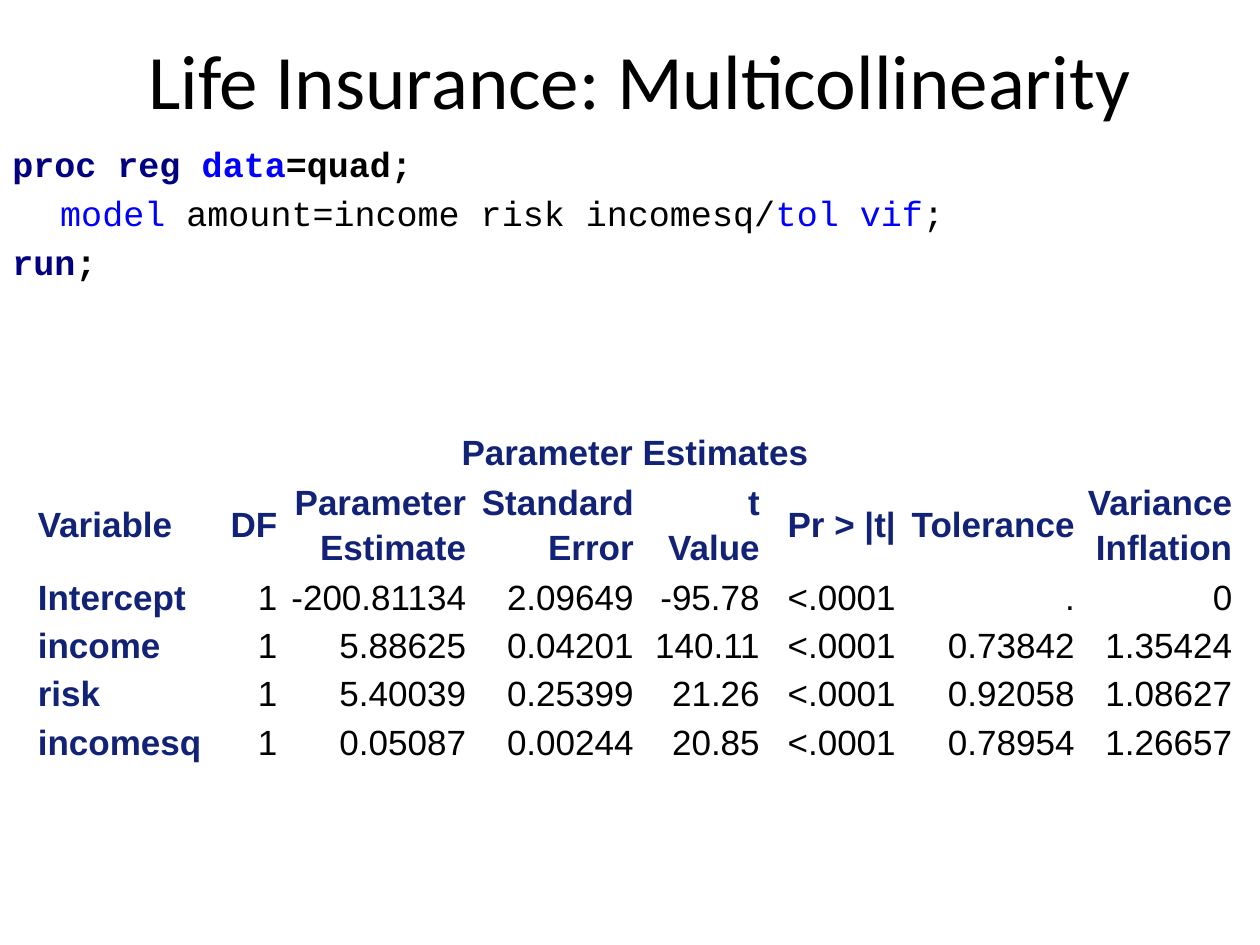
from pptx import Presentation
from pptx.dml.color import RGBColor
from pptx.enum.text import MSO_ANCHOR, PP_ALIGN
from pptx.util import Inches, Pt

BLACK, NAVY, BLUE, HEADING = "000000", "000080", "0000FF", "112277"

COLUMN_WIDTHS = [1.5, 0.5, 1.5, 1.33, 1, 1.08, 1.42, 1.25]
HEADERS = ["Variable", "DF", "Parameter\nEstimate", "Standard\nError",
           "t\nValue", "Pr > |t|", "Tolerance", "Variance\nInflation"]
ESTIMATES = [
    ["Intercept", "1", "-200.81134", "2.09649", "-95.78", "<.0001", ".", "0"],
    ["income", "1", "5.88625", "0.04201", "140.11", "<.0001", "0.73842", "1.35424"],
    ["risk", "1", "5.40039", "0.25399", "21.26", "<.0001", "0.92058", "1.08627"],
    ["incomesq", "1", "0.05087", "0.00244", "20.85", "<.0001", "0.78954", "1.26657"],
]

# Each code line: indent in inches, bold, coloured pieces
CODE = [
    (0, True, [("proc reg ", NAVY), ("data", BLUE), ("=quad;", BLACK)]),
    (0.38, False, [("model", BLUE), (" amount=income risk incomesq/", BLACK),
                   ("tol vif", BLUE), (";", BLACK)]),
    (0, True, [("run", NAVY), (";", BLACK)]),
]


def rgb(value):
    return RGBColor.from_string(value)


def add_text(para, text, font="Arial", size=20, color=BLACK, bold=False):
    for number, line in enumerate(text.split("\n")):
        if number:
            para.add_line_break()
        span = para.add_run()
        span.text = line
        span.font.name = font
        span.font.size = Pt(size)
        span.font.bold = bold
        span.font.color.rgb = rgb(color)


def place_title(page, left, top, width, height):
    title = page.shapes.title
    title.left, title.top = Inches(left), Inches(top)
    title.width, title.height = Inches(width), Inches(height)
    frame = title.text_frame
    frame.vertical_anchor = MSO_ANCHOR.MIDDLE
    para = frame.paragraphs[0]
    para.alignment = PP_ALIGN.CENTER
    add_text(para, "Life Insurance: Multicollinearity", font="Calibri", size=44)


def place_code(page, left, top, width, height):
    box = page.shapes.add_textbox(Inches(left), Inches(top), Inches(width), Inches(height))
    frame = box.text_frame
    frame.word_wrap = True
    for number, (indent, bold, pieces) in enumerate(CODE):
        para = frame.add_paragraph() if number else frame.paragraphs[0]
        para.space_before = Pt(4)
        para._p.get_or_add_pPr().set("marL", str(Inches(indent)))
        for text, color in pieces:
            add_text(para, text, font="Courier New", color=color, bold=bold)


def clear_cell(cell):
    cell.fill.background()
    cell.vertical_anchor = MSO_ANCHOR.MIDDLE
    cell.margin_left = cell.margin_right = Inches(0.05)
    cell.margin_top = cell.margin_bottom = 0


def fill_cell(cell, text, align, heading):
    para = cell.text_frame.paragraphs[0]
    para.alignment = align
    para.line_spacing = 1.15
    para.space_before = para.space_after = Pt(5)
    add_text(para, text, color=HEADING if heading else BLACK, bold=heading)


def place_estimates(page, left, top, width, row_height):
    rows = [HEADERS] + ESTIMATES
    # One extra row for the caption, and a header of two lines
    height = row_height * (len(rows) + 2)
    table = page.shapes.add_table(len(rows) + 1, len(HEADERS), Inches(left), Inches(top),
                                  Inches(width), Inches(height)).table
    table.first_row = table.horz_banding = False
    for column, column_width in zip(table.columns, COLUMN_WIDTHS):
        column.width = Inches(column_width)
    for number, row in enumerate(table.rows):
        row.height = Inches(row_height * (2 if number == 1 else 1))
    for cell in table.iter_cells():
        clear_cell(cell)

    # Caption across all columns
    table.cell(0, 0).merge(table.cell(0, len(HEADERS) - 1))
    fill_cell(table.cell(0, 0), "Parameter Estimates", PP_ALIGN.CENTER, True)

    # Column headers and values
    for r, values in enumerate(rows, start=1):
        for c, text in enumerate(values):
            align = PP_ALIGN.RIGHT if c else PP_ALIGN.LEFT
            fill_cell(table.cell(r, c), text, align, r == 1 or c == 0)


def main():
    deck = Presentation()
    deck.slide_width, deck.slide_height = Inches(10), Inches(7.5)
    page = deck.slides.add_slide(deck.slide_layouts[5])
    page.background.fill.solid()
    page.background.fill.fore_color.rgb = rgb("FFFFFF")
    place_title(page, 0.58, 0, 9, 1.25)
    place_code(page, 0, 1.08, 10, 1.75)
    place_estimates(page, 0.25, 3.38, sum(COLUMN_WIDTHS), 0.36)
    deck.save("out.pptx")


if __name__ == "__main__":
    main()
